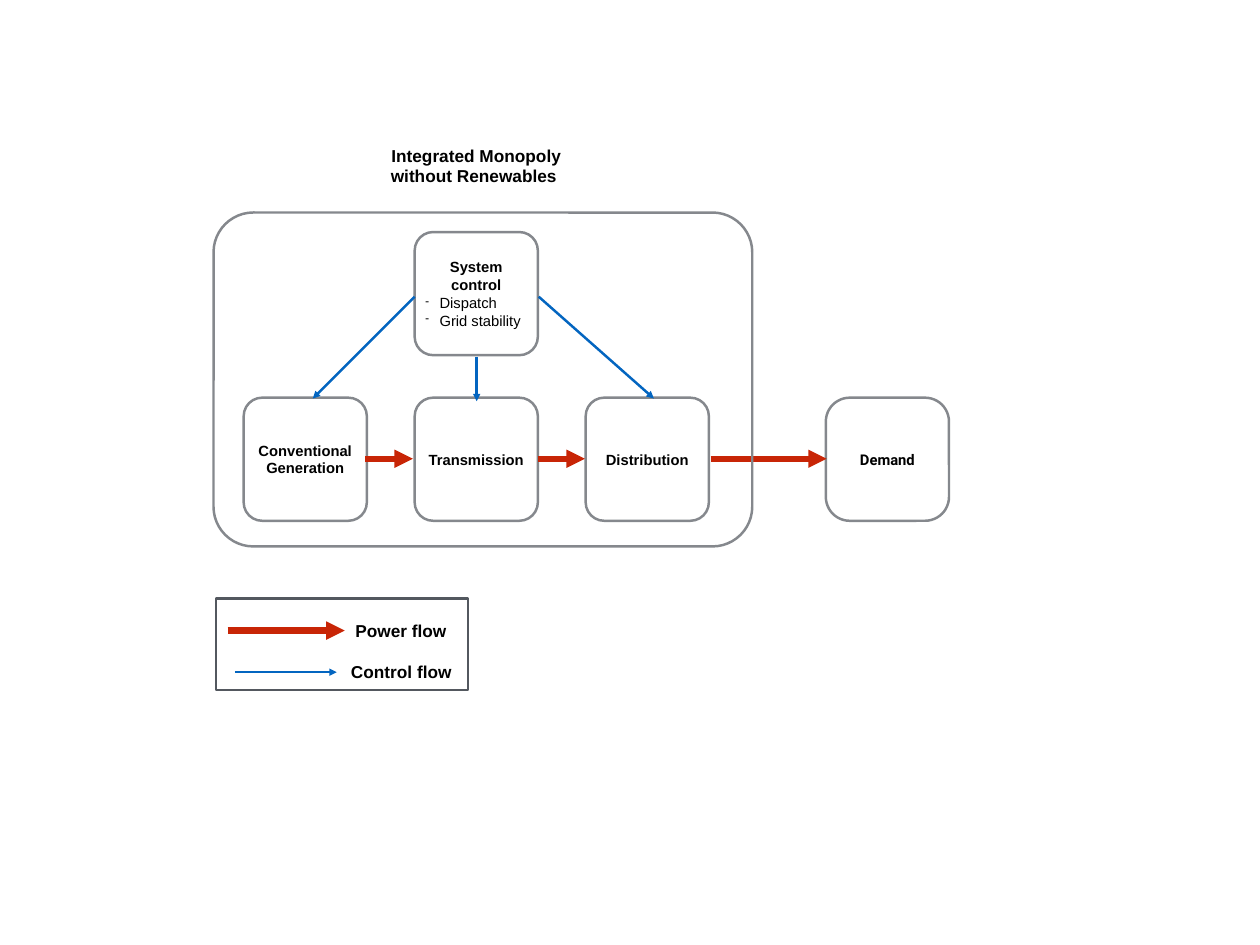
"""Build a slide on power and control flows in an integrated monopoly without renewables."""
from lxml import etree
from pptx import Presentation
from pptx.dml.color import RGBColor
from pptx.enum.shapes import MSO_CONNECTOR, MSO_SHAPE
from pptx.enum.text import MSO_ANCHOR, MSO_AUTO_SIZE, PP_ALIGN
from pptx.oxml.ns import qn
from pptx.util import Emu, Pt

ROUNDED, RECTANGLE = MSO_SHAPE.ROUNDED_RECTANGLE, MSO_SHAPE.RECTANGLE
STRAIGHT = MSO_CONNECTOR.STRAIGHT
LEFT, CENTER = PP_ALIGN.LEFT, PP_ALIGN.CENTER
MIDDLE = MSO_ANCHOR.MIDDLE
GROW = MSO_AUTO_SIZE.SHAPE_TO_FIT_TEXT

EMU_PER_PX = 9144
SLIDE_W, SLIDE_H = 1422, 1067
INSET = 6
BULLET_INDENT = 16

BLACK, GREY, DARK_GREY = "000000", "85888D", "53585F"
POWER = ("C82506", 5)
CONTROL = ("0365C0", 2)

TITLE = ["Integrated Monopoly", "without Renewables "]
STAGES = ["Conventional Generation", "Transmission", "Distribution"]
CONTROLLER = "System control"
CONTROLLER_TASKS = ["Dispatch", "Grid stability"]
CONSUMER = "Demand"
LEGEND = [
    ("Power flow", POWER, (257, 389), 712, (395, 694, 115, 35)),
    ("Control flow", CONTROL, (265, 380), 759, (390, 741, 126, 35)),
]

BOX = 139
STAGE_LEFT, STAGE_STEP, STAGE_TOP = 275, 193, 449
CONTROLLER_LEFT, CONTROLLER_TOP = STAGE_LEFT + STAGE_STEP, 262
CONSUMER_LEFT = 932
MONOPOLY = (241, 240, 608, 377)
LEGEND_FRAME = (244, 676, 284, 103)
TITLE_AREA = (433, 158, 209, 58)

POWER_Y = STAGE_TOP + BOX // 2
POWER_SPANS = [(802, 933), (607, 660), (412, 466)]
CONTROL_Y = 335
CONTROL_ARROWS = [
    (CONTROLLER_LEFT, CONTROL_Y, 353, 450),
    (608, CONTROL_Y, 738, 450),
    (538, 403, 538, 453),
]

prs = Presentation()
prs.slide_width, prs.slide_height = Emu(SLIDE_W * EMU_PER_PX), Emu(SLIDE_H * EMU_PER_PX)
slide = prs.slides.add_slide(prs.slide_layouts[6])


def px(*lengths):
    return [Emu(length * EMU_PER_PX) for length in lengths]


def rgb(value):
    return RGBColor.from_string(value)


def write(shape, lines, size=12, font="Arial", bold=True, align=CENTER, wrap=True,
          bullet=None, append=False):
    frame = shape.text_frame
    frame.word_wrap = wrap
    frame.vertical_anchor = MIDDLE
    inset = px(INSET)[0]
    frame.margin_left = frame.margin_right = frame.margin_top = frame.margin_bottom = inset
    for index, line in enumerate(lines):
        is_first = index == 0 and not append
        paragraph = frame.paragraphs[0] if is_first else frame.add_paragraph()
        paragraph.alignment = align
        run = paragraph.add_run()
        run.text = line
        run.font.size, run.font.name, run.font.bold = Pt(size), font, bold
        run.font.color.rgb = rgb(BLACK)
        if bullet:
            props = paragraph._p.get_or_add_pPr()
            indent = px(BULLET_INDENT)[0]
            props.set("marL", str(indent))
            props.set("indent", str(-indent))
            etree.SubElement(props, qn("a:buSzPct"), val="75000")
            etree.SubElement(props, qn("a:buChar"), char=bullet)


def label(area, lines):
    box = slide.shapes.add_textbox(*px(*area))
    write(box, lines, size=14, wrap=False)
    box.text_frame.auto_size = GROW


def outline(area, kind=ROUNDED, color=GREY, corner=0.15):
    shape = slide.shapes.add_shape(kind, *px(*area))
    shape.shadow.inherit = False
    shape.fill.background()
    shape.line.color.rgb = rgb(color)
    shape.line.width = Pt(2)
    if kind == ROUNDED:
        shape.adjustments[0] = corner
    return shape


def arrow(x1, y1, x2, y2, flow):
    color, width = flow
    connector = slide.shapes.add_connector(STRAIGHT, *px(x1, y1, x2, y2))
    connector.line.color.rgb = rgb(color)
    connector.line.width = Pt(width)
    etree.SubElement(connector.line._get_or_add_ln(), qn("a:tailEnd"), type="triangle")
    etree.SubElement(connector._element.spPr, qn("a:effectLst"))


consumer = outline((CONSUMER_LEFT, STAGE_TOP, BOX, BOX), corner=0.194)
write(consumer, [CONSUMER], font="Roboto")

for position, stage in enumerate(STAGES):
    stage_box = outline((STAGE_LEFT + position * STAGE_STEP, STAGE_TOP, BOX, BOX))
    write(stage_box, [stage])

controller = outline((CONTROLLER_LEFT, CONTROLLER_TOP, BOX, BOX))
write(controller, [CONTROLLER])
write(controller, CONTROLLER_TASKS, bold=False, align=LEFT, bullet="-", append=True)

for start, end in POWER_SPANS:
    arrow(start, POWER_Y, end, POWER_Y, POWER)

outline(MONOPOLY, corner=0.119)

for ends in CONTROL_ARROWS:
    arrow(*ends, CONTROL)

label(TITLE_AREA, TITLE)

outline(LEGEND_FRAME, kind=RECTANGLE, color=DARK_GREY)
for name, flow, (start, end), y, area in LEGEND:
    arrow(start, y, end, y, flow)
    label(area, [name])

prs.save("out.pptx")
